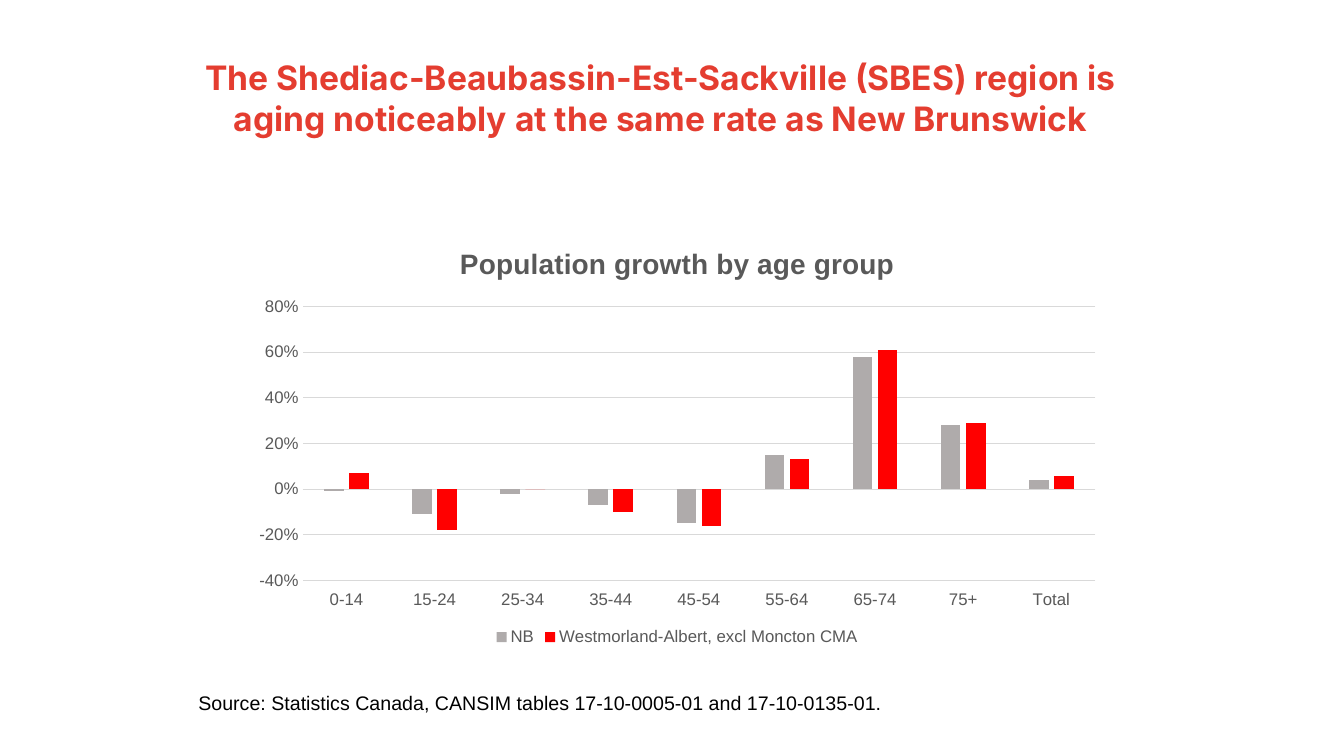
from dataclasses import dataclass

import pptx
import pptx.chart.axis
import pptx.chart.data
import pptx.dml.color
import pptx.enum.chart
import pptx.enum.text
import pptx.text.text
import pptx.util

Pt = pptx.util.Pt
RGBColor = pptx.dml.color.RGBColor

TITLE_RED = RGBColor(0xE4, 0x3D, 0x30)
BLACK = RGBColor(0, 0, 0)
LABEL_GRAY = RGBColor(0x59, 0x59, 0x59)
GRID_GRAY = RGBColor(0xD9, 0xD9, 0xD9)
BAR_GRAY = RGBColor(0xAF, 0xAB, 0xAB)
BAR_RED = RGBColor(0xFF, 0, 0)


@dataclass(frozen=True)
class Region:
    name: str
    growth: tuple[float, ...]
    color: RGBColor


AGE_GROUPS = ("0-14", "15-24", "25-34", "35-44", "45-54", "55-64", "65-74", "75+", "Total")
REGIONS = (
    Region("NB", (-0.01, -0.11, -0.02, -0.07, -0.15, 0.15, 0.58, 0.28, 0.04), BAR_GRAY),
    Region(
        "Westmorland-Albert, excl Moncton CMA",
        (0.07, -0.18, 0, -0.1, -0.16, 0.13, 0.61, 0.29, 0.06),
        BAR_RED,
    ),
)


def format_font(font: pptx.text.text.Font, *, size: float, color: RGBColor,
                name: str = "Arial", bold: bool = False) -> None:
    font.name = name
    font.size = Pt(size)
    font.bold = bold
    font.color.rgb = color


def write_text(text_frame: pptx.text.text.TextFrame, text: str, *, size: float,
               color: RGBColor, name: str = "Arial", bold: bool = False,
               alignment: pptx.enum.text.PP_ALIGN = pptx.enum.text.PP_ALIGN.LEFT) -> None:
    text_frame.text = text
    paragraph = text_frame.paragraphs[0]
    paragraph.alignment = alignment
    paragraph.space_before = Pt(0)
    format_font(paragraph.runs[0].font, size=size, color=color, name=name, bold=bold)


def format_line(line: pptx.dml.line.LineFormat) -> None:
    line.color.rgb = GRID_GRAY
    line.width = Pt(0.75)


def format_axis(axis: pptx.chart.axis.CategoryAxis | pptx.chart.axis.ValueAxis) -> None:
    axis.major_tick_mark = pptx.enum.chart.XL_TICK_MARK.NONE
    axis.minor_tick_mark = pptx.enum.chart.XL_TICK_MARK.NONE
    format_font(axis.tick_labels.font, size=12, color=LABEL_GRAY)


def add_title(slide: pptx.slide.Slide) -> None:
    title = slide.shapes.title
    title.left, title.top, title.width, title.height = Pt(122.4), Pt(37.4), Pt(699.1), Pt(111.6)
    text_frame = title.text_frame
    text_frame.word_wrap = True
    text_frame.auto_size = pptx.enum.text.MSO_AUTO_SIZE.NONE
    text_frame.vertical_anchor = pptx.enum.text.MSO_ANCHOR.TOP
    write_text(
        text_frame,
        "The Shediac-Beaubassin-Est-Sackville (SBES) region is "
        "aging noticeably at the same rate as New Brunswick",
        size=24, color=TITLE_RED, name="Inter", bold=True,
        alignment=pptx.enum.text.PP_ALIGN.CENTER,
    )


def add_growth_chart(slide: pptx.slide.Slide) -> None:
    chart_data = pptx.chart.data.CategoryChartData(number_format="0%")
    chart_data.categories = AGE_GROUPS
    for region in REGIONS:
        chart_data.add_series(region.name, region.growth)
    chart = slide.shapes.add_chart(
        pptx.enum.chart.XL_CHART_TYPE.COLUMN_CLUSTERED,
        Pt(172.8), Pt(162), Pt(622), Pt(302.4), chart_data,
    ).chart
    format_font(chart.font, size=10, color=BLACK)

    chart.has_title = True
    write_text(chart.chart_title.text_frame, "Population growth by age group",
               size=20, color=LABEL_GRAY, bold=True,
               alignment=pptx.enum.text.PP_ALIGN.CENTER)
    chart.chart_title.include_in_layout = False

    chart.has_legend = True
    chart.legend.position = pptx.enum.chart.XL_LEGEND_POSITION.BOTTOM
    chart.legend.include_in_layout = False
    format_font(chart.legend.font, size=12, color=LABEL_GRAY)

    category_axis = chart.category_axis
    format_axis(category_axis)
    category_axis.tick_label_position = pptx.enum.chart.XL_TICK_LABEL_POSITION.LOW
    format_line(category_axis.format.line)

    value_axis = chart.value_axis
    format_axis(value_axis)
    value_axis.minimum_scale = -0.4
    value_axis.maximum_scale = 0.8
    value_axis.major_unit = 0.2
    value_axis.tick_labels.number_format = "0%"
    value_axis.tick_labels.number_format_is_linked = False
    value_axis.format.line.fill.background()
    value_axis.has_major_gridlines = True
    format_line(value_axis.major_gridlines.format.line)

    plot = chart.plots[0]
    plot.vary_by_categories = False
    plot.gap_width = 219
    plot.overlap = -27
    for series, region in zip(plot.series, REGIONS):
        series.invert_if_negative = False
        series.format.fill.solid()
        series.format.fill.fore_color.rgb = region.color


def add_source_note(slide: pptx.slide.Slide) -> None:
    text_frame = slide.shapes.add_textbox(Pt(134.6), Pt(490.3), Pt(673.9), Pt(24.5)).text_frame
    text_frame.word_wrap = True
    write_text(text_frame,
               "Source: Statistics Canada, CANSIM tables 17-10-0005-01 and 17-10-0135-01.",
               size=14, color=BLACK)


def main() -> None:
    presentation = pptx.Presentation()
    presentation.slide_width = Pt(960)
    presentation.slide_height = Pt(540)
    slide = presentation.slides.add_slide(presentation.slide_layouts.get_by_name("Title Only"))
    add_title(slide)
    add_growth_chart(slide)
    add_source_note(slide)
    presentation.save("out.pptx")


if __name__ == "__main__":
    main()
